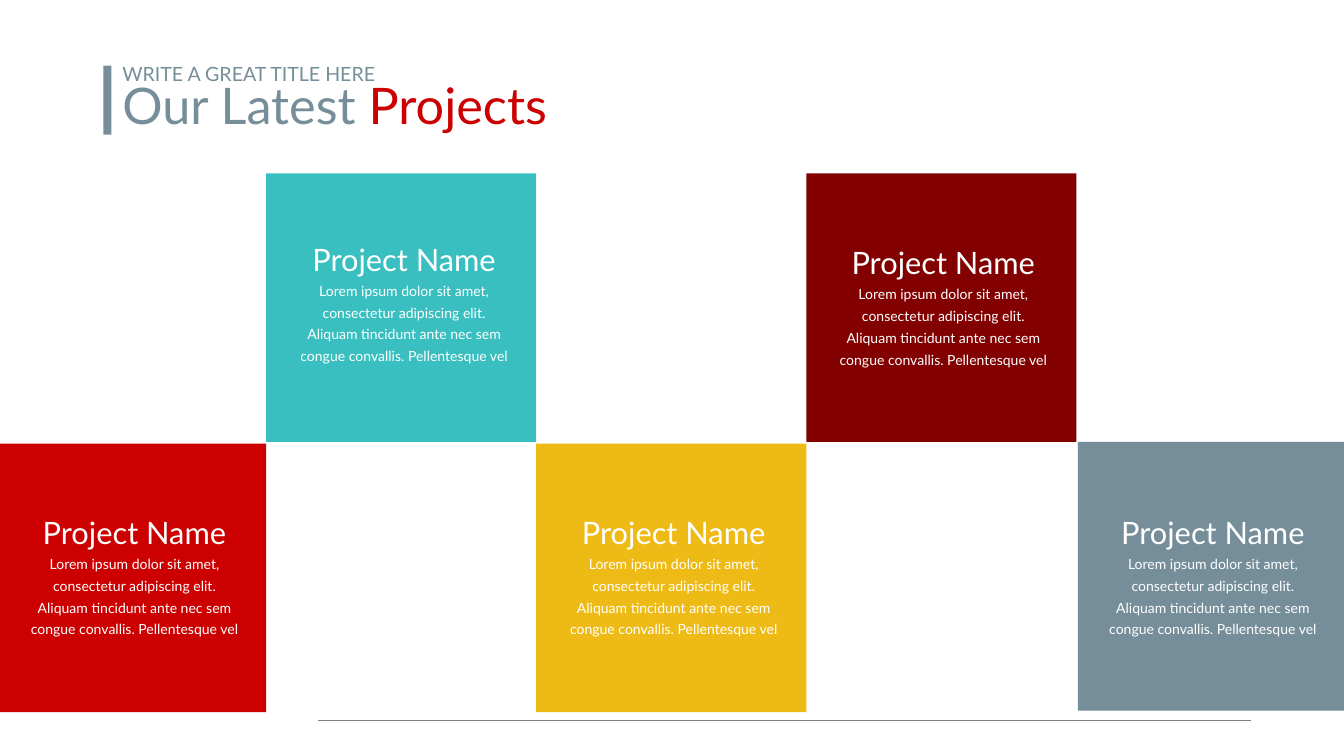
from lxml import etree
from pptx import Presentation
from pptx import util as u
from pptx.dml.color import RGBColor
from pptx.enum import shapes, text
from pptx.oxml.ns import qn

COLORS = {"teal": "3ABFC0", "maroon": "820000", "red": "CC0000", "yellow": "EEBB16",
          "slate": "758E99", "gray": "808080", "white": "FFFFFF"}
FONT = "Lato"
DESCRIPTION = ("Lorem ipsum dolor sit amet, consectetur adipiscing elit. "
               "Aliquam tincidunt ante nec sem congue convallis. Pellentesque vel")
SLIDE_WIDTH = 26.67
PITCH, TILE_HEIGHT = 5.36, 5.33
GRID_LEFT, GRID_TOP = -0.08, 3.44
CAPTION_LEFT, CAPTION_PITCH = 0.27, 5.35


def add_bar(left, top, width, height, color):
    bar = slide.shapes.add_shape(shapes.MSO_SHAPE.RECTANGLE, u.Inches(left), u.Inches(top),
                                 u.Inches(width), u.Inches(height))
    bar.shadow.inherit = False
    bar.fill.solid()
    bar.fill.fore_color.rgb = RGBColor.from_string(COLORS[color])
    bar.line.fill.background()


def set_font(font, size, color):
    font.name = FONT
    font.size = u.Pt(size)
    font.color.rgb = RGBColor.from_string(COLORS[color])


presentation = Presentation()
presentation.slide_width = u.Inches(SLIDE_WIDTH)
presentation.slide_height = u.Inches(15)
slide = presentation.slides.add_slide(presentation.slide_layouts[5])

# Footer rule
rule = slide.shapes.add_connector(shapes.MSO_CONNECTOR.STRAIGHT, u.Inches(6.32), u.Inches(14.3),
                                  u.Inches(24.83), u.Inches(14.3))
rule.line.color.rgb = RGBColor.from_string(COLORS["gray"])
rule.line.width = u.Pt(1)
etree.SubElement(rule._element.spPr, qn("a:effectLst"))

# Checkerboard of projects: colour, row, top of the caption
projects = [("red", 1, 10.05), ("teal", 0, 4.63), ("yellow", 1, 10.05),
            ("maroon", 0, 4.7), ("slate", 1, 10.05)]
for column, (color, row, caption_top) in enumerate(projects):
    left = GRID_LEFT + column * PITCH
    top = GRID_TOP + row * PITCH
    width = PITCH
    if column == len(projects) - 1:  # the last tile ends at the slide's edge
        left += 0.03
        top -= 0.03
        width = SLIDE_WIDTH - left
    add_bar(left, top, width, TILE_HEIGHT, color)

    caption = slide.shapes.add_textbox(u.Inches(CAPTION_LEFT + column * CAPTION_PITCH),
                                       u.Inches(caption_top), u.Inches(4.8), u.Inches(2.74))
    frame = caption.text_frame
    frame.word_wrap = True
    frame.auto_size = text.MSO_AUTO_SIZE.SHAPE_TO_FIT_TEXT
    frame.vertical_anchor = text.MSO_ANCHOR.MIDDLE
    frame.margin_left = frame.margin_right = u.Inches(0.27)
    frame.margin_top = frame.margin_bottom = u.Inches(0.13)
    frame.text = f"Project Name\n{DESCRIPTION}"
    for paragraph, size in zip(frame.paragraphs, (44, 20)):
        paragraph.alignment = text.PP_ALIGN.CENTER
        set_font(paragraph.font, size, "white")
    frame.paragraphs[1].line_spacing = 1.3

# Heading
title = slide.shapes.title
title.left, title.top = u.Inches(2.33), u.Inches(1.65)
title.width, title.height = u.Inches(15.34), u.Inches(1.11)
title.text_frame.word_wrap = True
title.text_frame.auto_size = text.MSO_AUTO_SIZE.SHAPE_TO_FIT_TEXT
title.text_frame.vertical_anchor = text.MSO_ANCHOR.TOP
paragraph = title.text_frame.paragraphs[0]
paragraph.alignment = text.PP_ALIGN.LEFT
paragraph.line_spacing = 0.8
for words, color in (("Our Latest ", "slate"), ("Projects", "red")):
    run = paragraph.add_run()
    run.text = words
    set_font(run.font, 72, color)

subtitle = slide.shapes.add_textbox(u.Inches(2.33), u.Inches(1.18), u.Inches(9.58), u.Inches(0.57))
subtitle.text_frame.word_wrap = True
subtitle.text_frame.auto_size = text.MSO_AUTO_SIZE.SHAPE_TO_FIT_TEXT
subtitle.text_frame.text = "WRITE A GREAT TITLE HERE"
set_font(subtitle.text_frame.paragraphs[0].font, 28, "slate")

add_bar(2.05, 1.3, 0.16, 1.37, "slate")

presentation.save("out.pptx")
